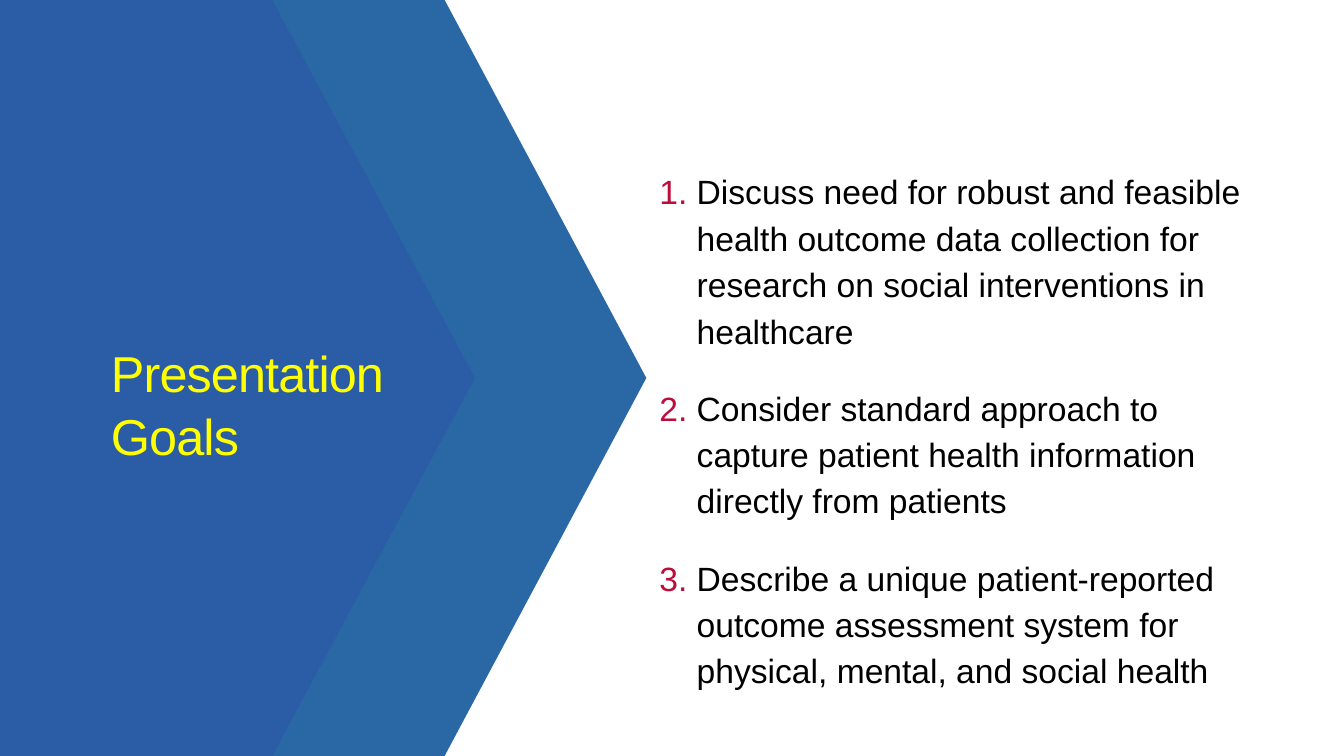
from dataclasses import dataclass
from lxml.etree import SubElement
from pptx import Presentation
from pptx.dml.color import RGBColor
from pptx.enum.text import MSO_ANCHOR, MSO_AUTO_SIZE, PP_ALIGN
from pptx.oxml.ns import qn
from pptx.util import Inches, Pt


@dataclass(frozen=True)
class Theme:
    font: str = "Arial"
    back: str = "2A67A5"
    front: str = "2A5DA5"
    title: str = "FFFF00"
    mark: str = "BB0E3D"
    text: str = "000000"
    head: int = 36
    body: int = 24


theme = Theme()


def set_frame(shape, left, top, width, height):
    shape.left, shape.top = Inches(left), Inches(top)
    shape.width, shape.height = Inches(width), Inches(height)
    frame = shape.text_frame
    frame.word_wrap = True
    frame.auto_size = MSO_AUTO_SIZE.NONE
    frame.vertical_anchor = MSO_ANCHOR.TOP
    frame.margin_left = frame.margin_right = 0
    frame.margin_top = frame.margin_bottom = 0
    return frame


def set_font(para, size, color, track):
    para.alignment = PP_ALIGN.LEFT
    for run in para.runs:
        run.font.name = theme.font
        run.font.size = Pt(size)
        run.font.color.rgb = RGBColor.from_string(color)
        run._r.get_or_add_rPr().set("spc", str(track))


deck = Presentation()
deck.slide_width, deck.slide_height = Inches(13.33), Inches(7.5)
slide = deck.slides.add_slide(deck.slide_layouts[5])
shapes = slide.shapes

for left, neck, tip, color in (
    (2.22, 4.41, 6.41, theme.back),
    (0, 2.7, 4.71, theme.front),
):
    pen = shapes.build_freeform(Inches(left), 0)
    points = [(neck, 0), (tip, 3.75), (neck, 7.5), (left, 7.5)]
    pen.add_line_segments([(Inches(x), Inches(y)) for x, y in points])
    arrow = pen.convert_to_shape()
    arrow.shadow.inherit = False
    arrow.fill.solid()
    arrow.fill.fore_color.rgb = RGBColor.from_string(color)
    arrow.line.fill.background()

title = shapes.title
shapes._spTree.append(title._element)
frame = set_frame(title, 1.1, 3.37, 3.2, 1.25)
frame.text = "Presentation Goals"
para = frame.paragraphs[0]
para.line_spacing = 1.04
set_font(para, theme.head, theme.title, -65)

goals = [
    "Discuss need for robust and feasible health outcome data collection "
    "for research on social interventions in healthcare",
    "Consider standard approach to capture patient health information "
    "directly from patients",
    "Describe a unique patient-reported outcome assessment system for "
    "physical, mental, and social health",
]
box = shapes.add_textbox(0, 0, 0, 0)
frame = set_frame(box, 6.53, 1.64, 5.79, 5.05)
frame.text = "\n".join(goals)
for index, para in enumerate(frame.paragraphs):
    props = para._p.get_or_add_pPr()
    props.set("marL", str(Inches(0.38)))
    props.set("indent", str(-Inches(0.37)))
    tint = SubElement(props, qn("a:buClr"))
    SubElement(tint, qn("a:srgbClr"), val=theme.mark)
    SubElement(props, qn("a:buFont"), typeface=theme.font)
    SubElement(props, qn("a:buAutoNum"), type="arabicPeriod")
    para.line_spacing = 1.15
    para.space_before = Pt(22 if index else 0)
    set_font(para, theme.body, theme.text, 0)

deck.save("out.pptx")
